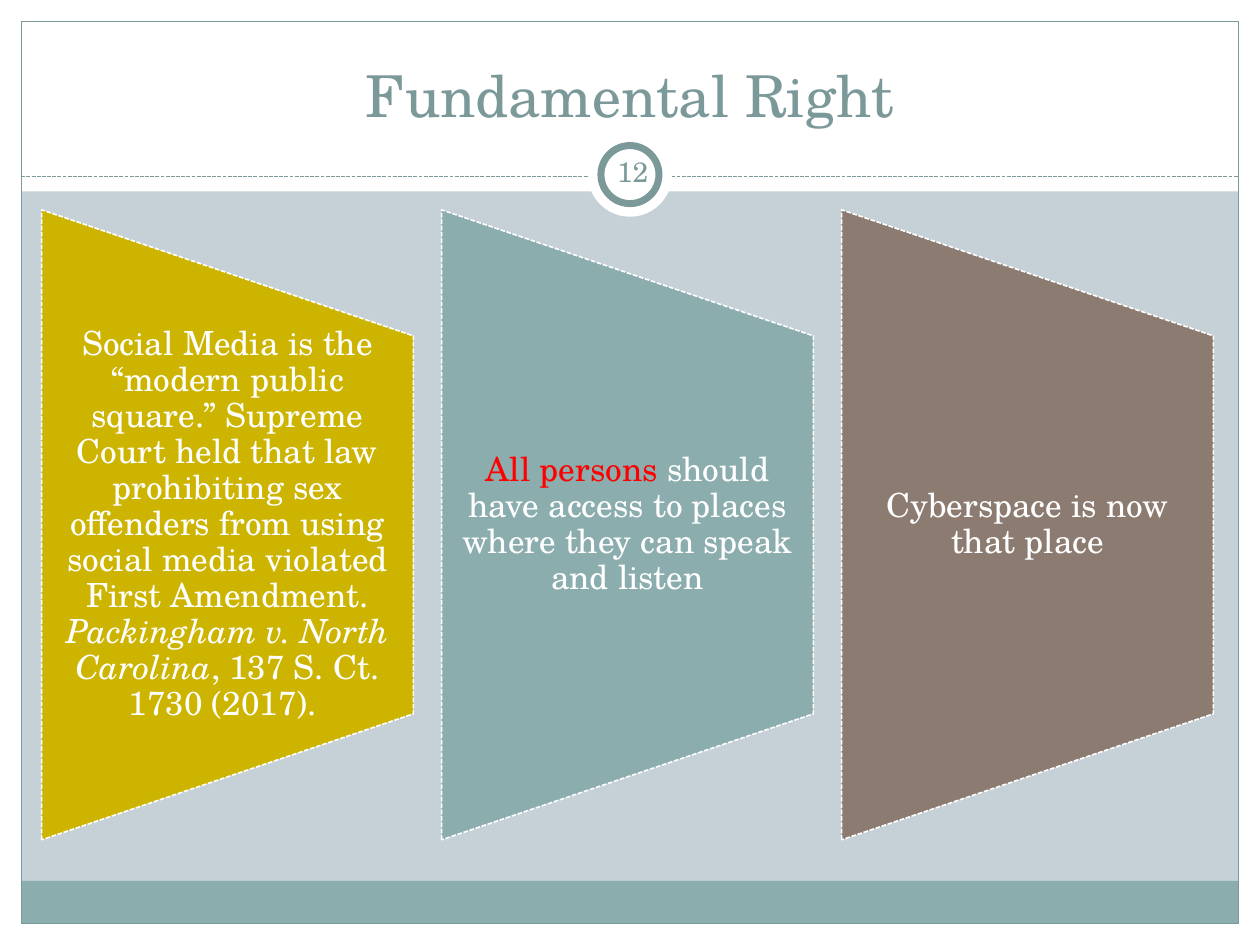
from lxml.etree import SubElement as Sub
from pptx import Presentation
from pptx.dml.color import RGBColor
from pptx.enum.dml import MSO_LINE as Dash
from pptx.enum.shapes import MSO_CONNECTOR as Conn, MSO_SHAPE as Kind
from pptx.enum.text import MSO_ANCHOR as Anchor, PP_ALIGN as Align
from pptx.oxml.ns import qn
from pptx.util import Cm, Pt

FONT = "TeX Gyre Schola"
WHITE, TEAL, DEEP, RED = "FFFFFF", "8CADAE", "7C999A", "FF0000"
WIDE, HIGH, EDGE = 25.4, 19.05, 0.43

PANELS = [
    ("CCB400", [
        ("Social Media is the “modern public square.” Supreme Court held that "
         "law prohibiting sex offenders from using social media violated "
         "First Amendment. ", WHITE, False),
        ("Packingham v. North Carolina", WHITE, True),
        (", 137 S. Ct. 1730 (2017). ", WHITE, False)]),
    (TEAL, [
        ("All persons ", RED, False),
        ("should have access to places where they can speak and listen",
         WHITE, False)]),
    ("8C7B70", [("Cyberspace is now that place", WHITE, False)]),
]


def paint(color, code):
    color.rgb = RGBColor.from_string(code)


def stroke(line, code, width, dash=None):
    paint(line.color, code)
    line.width = Pt(width)
    if dash:
        line.dash_style = dash


def shape(slide, box, kind=Kind.RECTANGLE, fill=None):
    item = slide.shapes.add_shape(kind, *map(Cm, box))
    item.shadow.inherit = False
    item.line.fill.background()
    if fill:
        item.fill.solid()
        paint(item.fill.fore_color, fill)
    else:
        item.fill.background()
    return item


def text(slide, box, runs, size, anchor=Anchor.MIDDLE, pad=(0.25, 0.13),
         space=1.0):
    """Add centred text; each run is (words, colour, italic)."""
    frame = slide.shapes.add_textbox(*map(Cm, box)).text_frame
    frame.word_wrap = True
    frame.vertical_anchor = anchor
    frame.margin_left = frame.margin_right = Cm(pad[0])
    frame.margin_top = frame.margin_bottom = Cm(pad[1])
    para = frame.paragraphs[0]
    para.alignment = Align.CENTER
    para.line_spacing = space
    for words, code, slant in runs:
        run = para.add_run()
        run.text = words
        run.font.name = FONT
        run.font.size = Pt(size)
        run.font.italic = slant
        paint(run.font.color, code)


def border(slide, box):
    """Draw the white margins, the header band, the footer and the outline."""
    x, y, w, h = box
    head, foot = 3.86, 0.86
    for part in [(x, y + h - EDGE, w, EDGE), (x, y, w, head),
                 (x, y, EDGE, h), (x + w - EDGE, y, EDGE, h)]:
        shape(slide, part, fill=WHITE)
    inner = (x + EDGE, y + EDGE, w - 2 * EDGE, h - 2 * EDGE)
    shape(slide, (inner[0], y + h - EDGE - foot, inner[2], foot), fill=TEAL)
    stroke(shape(slide, inner).line, DEEP, 0.75)


def header(slide, box):
    """Draw the title over a dashed rule that carries the page number."""
    x, y, w, h = box
    rule = slide.shapes.add_connector(
        Conn.STRAIGHT, Cm(x), Cm(y + h), Cm(x + w), Cm(y + h))
    Sub(rule._element.spPr, qn("a:effectLst"))
    stroke(rule.line, DEEP, 0.75, Dash.SQUARE_DOT)
    rule.line._ln.find(qn("a:prstDash")).set("val", "sysDash")

    mid, row = x + w / 2, y + h - 0.04
    disc, ring = [
        shape(slide, (mid - d / 2, row - d / 2, d, d), Kind.OVAL, WHITE)
        for d in (1.7, 1.17)]
    stroke(ring.line, DEEP, 4)
    text(slide, (mid - 0.58, row - 0.67, 1.27, 1.22),
         [("12", DEEP, False)], 16, pad=(0.13, 0.13))
    text(slide, (x + 0.41, y + 0.2, w - 0.82, 2.11),
         [("Fundamental Right", DEEP, False)], 33, Anchor.BOTTOM)


def panel(slide, box, fill, runs):
    """Draw a trapezoid, wide on the left, with its text in the middle."""
    x, y, w, h = box
    turn = (w - h) / 2
    item = shape(slide, (x + turn, y - turn, h, w),
                 Kind.FLOWCHART_MANUAL_OPERATION, fill)
    item.rotation = 270
    stroke(item.line, WHITE, 0.9, Dash.SQUARE_DOT)
    item.line._ln.find(qn("a:prstDash")).set("val", "sysDash")
    text(slide, (x, y + h / 5, w, h * 0.6), runs, 19, pad=(0.33, 0), space=0.9)


def panels(slide, box):
    x, y, w, h = box
    gap = 0.57
    each = (w - gap * (len(PANELS) - 1)) / len(PANELS)
    for i, (fill, runs) in enumerate(PANELS):
        panel(slide, (x + i * (each + gap), y, each, h), fill, runs)


def main():
    deck = Presentation()
    deck.slide_width, deck.slide_height = Cm(WIDE), Cm(HIGH)
    slide = deck.slides.add_slide(deck.slide_layouts[6])
    back = slide.background.fill
    back.solid()
    paint(back.fore_color, "C5D1D7")
    border(slide, (0, 0, WIDE, HIGH))
    header(slide, (EDGE, EDGE, WIDE - 2 * EDGE, 3.13))
    panels(slide, (0.84, 4.23, 23.62, 12.7))
    deck.save("out.pptx")


if __name__ == "__main__":
    main()
